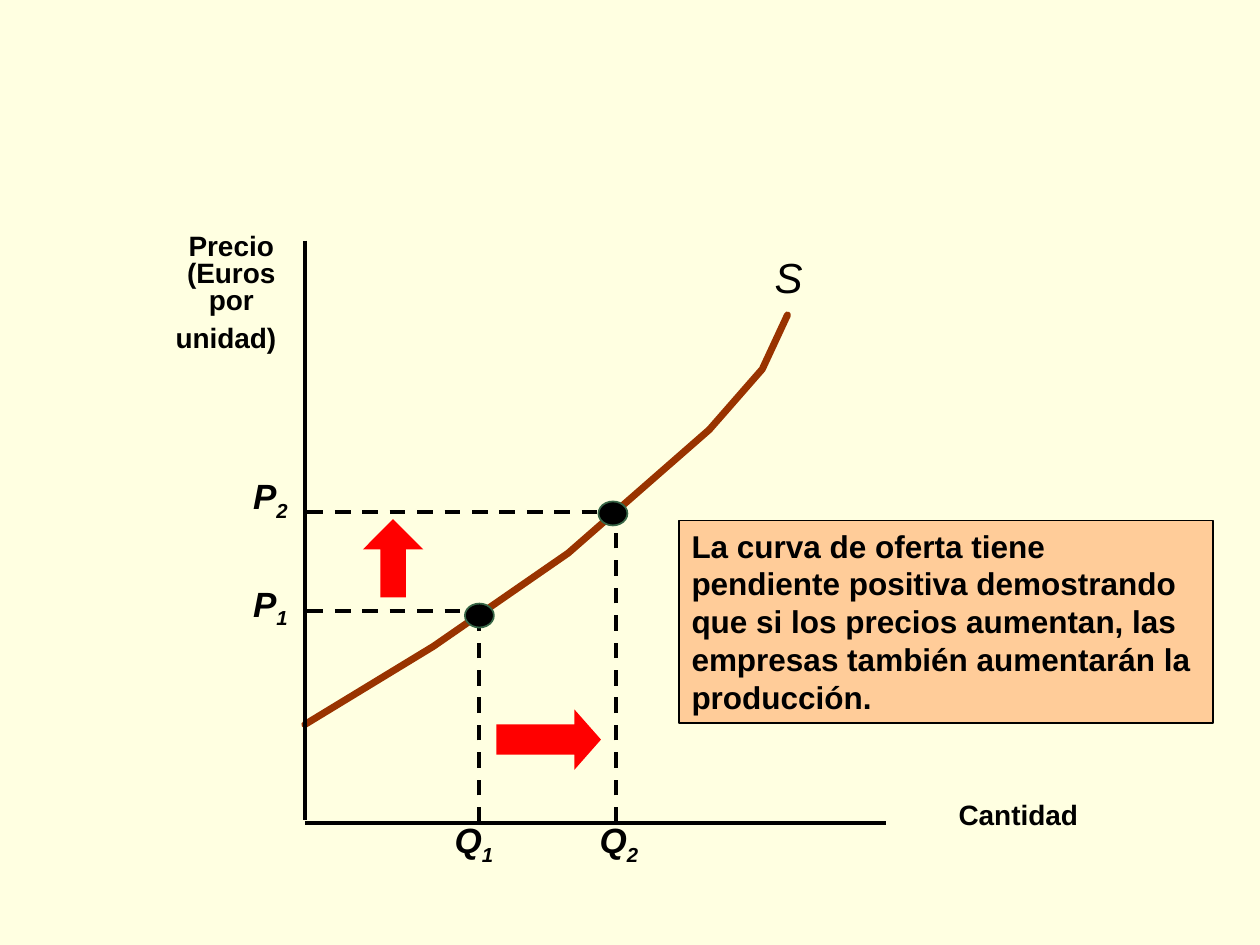
from pptx import Presentation
from pptx.dml.color import RGBColor
from pptx.enum.dml import MSO_LINE as Dash
from pptx.enum.shapes import MSO_CONNECTOR as Link, MSO_SHAPE as Kind
from pptx.enum.text import MSO_ANCHOR as Anchor, PP_ALIGN as Align
from pptx.oxml.ns import qn
from pptx.util import Inches, Pt
from lxml.etree import SubElement

CREAM = RGBColor(0xFF, 0xFF, 0xE1)
PEACH = RGBColor(0xFF, 0xCC, 0x99)
BROWN = RGBColor(0x99, 0x33, 0x00)
GREEN = RGBColor(0x37, 0x65, 0x46)
RED = RGBColor(0xFF, 0x00, 0x00)
BLACK = RGBColor(0x00, 0x00, 0x00)

WIDE, HIGH = Inches(10), Inches(7.5)
CELL = WIDE / 100  # the slide is a grid of 100 columns by 75 rows

# Boxes are left, top, width, height in grid cells.
PLOT = (24.2, 19.1, 46.1, 46.2)
NOTE = (53.9, 41.3, 42.4, 16.1)

# Plot positions are cells right of and above the origin.
CURVE = [(0, 7.8), (10.2, 14), (20.9, 21.4),
         (32.1, 31.2), (36.3, 36), (38.3, 40.3)]
DOT = (2.3, 1.9)


def grid(*cells):
    return [round(cell * CELL) for cell in cells]


def spot(box, x, y):
    """Turn a plot position into slide cells."""
    left, top, _, high = box
    return left + x, top + high - y


def style(font, size, name="Arial", bold=False, italic=False):
    font.size, font.name = Pt(size), name
    font.bold, font.italic = bold, italic
    font.color.rgb = BLACK


def line(shapes, start, end, width, dash=None):
    link = shapes.add_connector(Link.STRAIGHT, *grid(*start, *end))
    link.line.color.rgb = BLACK
    link.line.width = Pt(width)
    link.line.dash_style = dash
    SubElement(link._element.spPr, qn("a:effectLst"))


def solid(shapes, kind, box, fill, edge=None, turn=0, adjust=()):
    shape = shapes.add_shape(kind, *grid(*box))
    shape.shadow.inherit = False
    shape.fill.solid()
    shape.fill.fore_color.rgb = fill
    if edge is None:
        shape.line.fill.background()
    else:
        shape.line.color.rgb = edge
        shape.line.width = Pt(1)
    shape.rotation = turn
    for i, value in enumerate(adjust):
        shape.adjustments[i] = value
    return shape


def label(shapes, box, lines, size, wrap=False, align=Align.LEFT,
          space=None, **look):
    """Add a text box and return its last paragraph."""
    frame = shapes.add_textbox(*grid(*box)).text_frame
    frame.word_wrap = wrap
    frame.text = "\n".join(lines)
    for para in frame.paragraphs:
        para.alignment, para.line_spacing = align, space
        style(para.font, size, **look)
    return para


def add_tail(para):
    """End an axis title with its taller serif space."""
    run = para.add_run()
    run.text = " "
    style(run.font, 24, "Times New Roman")


def symbol(shapes, box, letter, index):
    para = label(shapes, box, [letter], 20, bold=True, italic=True)
    run = para.add_run()
    run.text = index
    run.font._element.set("baseline", "-25000")


def draw_curve(shapes, box):
    points = [grid(*spot(box, x, y)) for x, y in CURVE]
    path = shapes.build_freeform(*points[0])
    path.add_line_segments(points[1:], close=False)
    curve = path.convert_to_shape()
    curve.shadow.inherit = False
    curve.fill.background()
    curve.line.color.rgb = BROWN
    curve.line.width = Pt(4)
    curve.line._get_or_add_ln().set("cap", "rnd")
    x, y = spot(box, 36.3, 45.8)
    label(shapes, (x, y, 4.2, 5), ["S"], 24, italic=True)


def draw_axes(shapes, box):
    left, top, wide, high = box
    base = top + high
    line(shapes, (left, top), (left, base - 0.2), 2)
    line(shapes, (left, base), (left + wide, base), 2)
    add_tail(label(shapes, (left + 50.9, base - 3.6, 12.3, 5),
                   ["Cantidad"], 16, bold=True))
    add_tail(label(shapes, (left - 11.3, top - 0.9, 10.9, 10.6),
                   ["Precio", "(Euros", "por unidad)"], 16, wrap=True,
                   align=Align.CENTER, space=0.8, bold=True))


def draw_point(shapes, box, index, guide, ends, dot, tags):
    """Mark a point on the curve with its guides, dot, P and Q."""
    x, y = guide
    right, top = ends
    line(shapes, spot(box, 0.2, y), spot(box, right, y), 2.25, Dash.DASH)
    line(shapes, spot(box, x, 0), spot(box, x, top), 2.25, Dash.DASH)
    solid(shapes, Kind.OVAL, (*spot(box, *dot), *DOT), BLACK, GREEN)
    left, rise = tags
    symbol(shapes, (*spot(box, -5.1, rise), 4.8, 4.3), "P", index)
    symbol(shapes, (*spot(box, left, 0.8), 5.1, 4.3), "Q", index)


def draw_arrows(shapes, box):
    solid(shapes, Kind.RIGHT_ARROW, (*spot(box, 15.2, 9), 8.3, 4.8),
          RED, adjust=(0.5, 0.44))
    solid(shapes, Kind.RIGHT_ARROW, (*spot(box, 3.9, 23.4), 6.2, 4.8),
          RED, turn=270, adjust=(0.42, 0.5))


def draw_note(shapes, box):
    frame = solid(shapes, Kind.RECTANGLE, box, PEACH, BLACK).text_frame
    frame.word_wrap = True
    frame.vertical_anchor = Anchor.TOP
    frame.text = ("La curva de oferta tiene pendiente positiva demostrando "
                  "que si los precios aumentan, las empresas también "
                  "aumentarán la producción.")
    para = frame.paragraphs[0]
    para.alignment = Align.LEFT
    style(para.font, 18, bold=True)


def main():
    deck = Presentation()
    deck.slide_width, deck.slide_height = WIDE, HIGH
    slide = deck.slides.add_slide(deck.slide_layouts[6])
    back = slide.background.fill
    back.solid()
    back.fore_color.rgb = CREAM

    shapes = slide.shapes
    draw_curve(shapes, PLOT)
    draw_note(shapes, NOTE)
    draw_axes(shapes, PLOT)
    first = shapes.add_group_shape().shapes
    draw_point(first, PLOT, "1", guide=(13.8, 16.8), ends=(14.6, 16.4),
               dot=(12.7, 17.4), tags=(10.9, 19.6))
    second = shapes.add_group_shape().shapes
    draw_point(second, PLOT, "2", guide=(24.7, 24.7), ends=(25.2, 25),
               dot=(23.3, 25.5), tags=(22.4, 28.1))
    draw_arrows(second, PLOT)
    deck.save("out.pptx")


if __name__ == "__main__":
    main()
